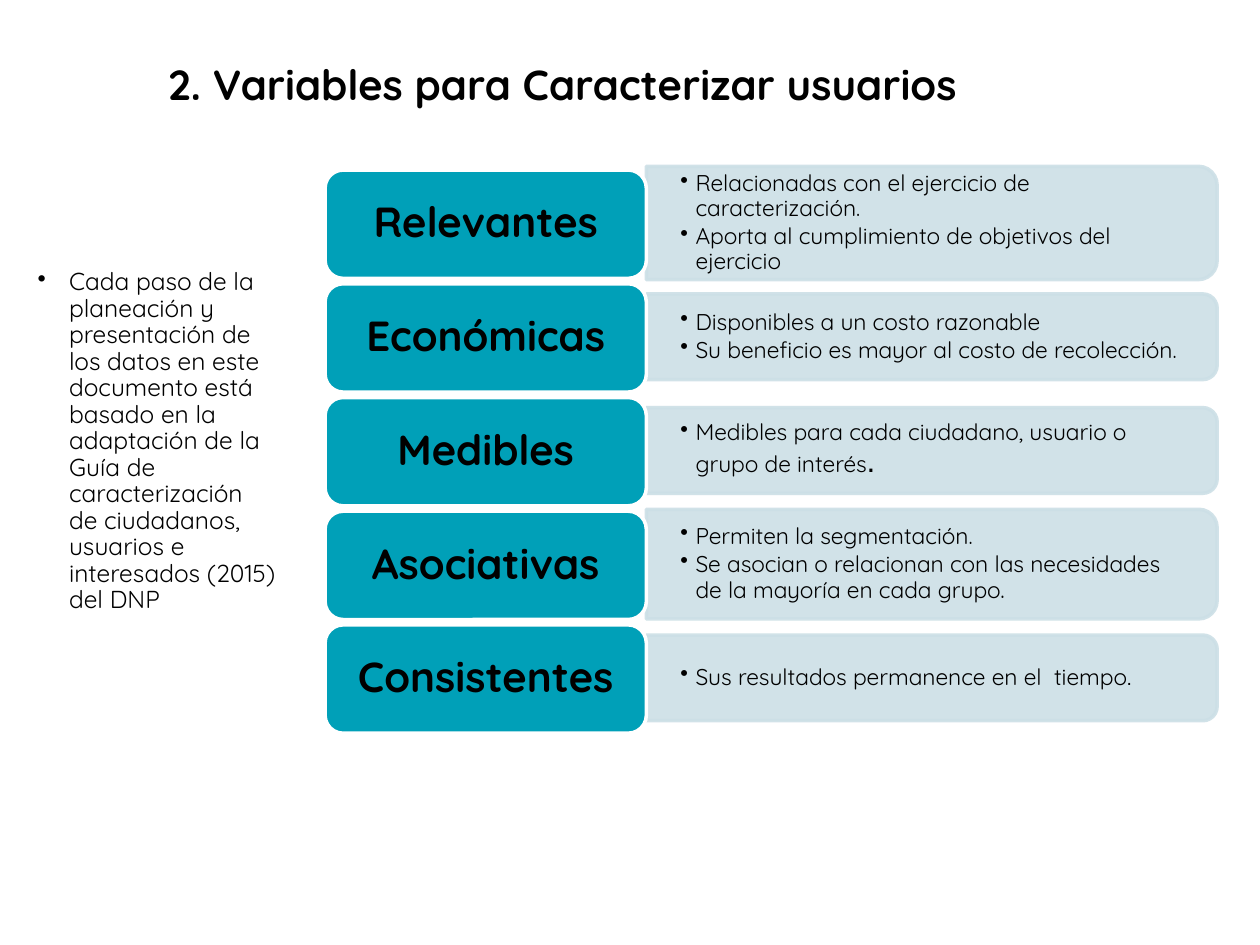
import pptx
import pptx.util
import pptx.dml.color
import pptx.enum.shapes
import pptx.enum.text
import pptx.oxml
import pptx.oxml.ns

Inches = pptx.util.Inches
Pt = pptx.util.Pt
RGBColor = pptx.dml.color.RGBColor
MSO_SHAPE = pptx.enum.shapes.MSO_SHAPE
MSO_ANCHOR = pptx.enum.text.MSO_ANCHOR
PP_ALIGN = pptx.enum.text.PP_ALIGN

TEAL = RGBColor(0x00, 0xA0, 0xB8)
PALE = RGBColor(0xCC, 0xDF, 0xE6)
WHITE = RGBColor(0xFF, 0xFF, 0xFF)
BLACK = RGBColor(0x00, 0x00, 0x00)
FONT = "Quicksand"

TITLE = "2. Variables para Caracterizar usuarios "
SOURCE_NOTE = (
    "Cada paso de la planeación y presentación de los datos en este documento "
    "está basado en la adaptación de la Guía de caracterización de ciudadanos, "
    "usuarios e interesados (2015) del DNP"
)
ROWS = [
    ("Relevantes", 0.9, [
        [("Relacionadas con el ejercicio de  caracterización.", 13, FONT)],
        [("Aporta al cumplimiento de objetivos del ejercicio", 13, FONT)],
    ]),
    ("Económicas", 0.68, [
        [("Disponibles a un costo razonable", 13, FONT)],
        [("Su beneficio es mayor al costo de recolección.", 13, FONT)],
    ]),
    ("Medibles", 0.68, [
        [("Medibles para cada ciudadano, usuario o grupo de interés", 13, FONT),
         (".", 18, "Arial")],
    ]),
    ("Asociativas", 0.87, [
        [("Permiten la segmentación.", 13, FONT)],
        [("Se asocian o relacionan con las necesidades de la mayoría en cada grupo", 13, FONT),
         (".", 14, FONT)],
    ]),
    ("Consistentes", 0.68, [
        [("Sus resultados permanence en el  tiempo", 13, FONT), (".", 11, "Arial")],
    ]),
]


def add_run(p, text, size, font=FONT, bold=False):
    """Add one black run to a paragraph."""
    r = p.add_run()
    r.text = text
    r.font.size = Pt(size)
    r.font.name = font
    r.font.bold = bold
    r.font.color.rgb = BLACK


def set_bullet(p, indent):
    """Give a paragraph a round bullet with a hanging indent."""
    pPr = p._p.get_or_add_pPr()
    pPr.set("marL", str(Inches(indent)))
    pPr.set("indent", str(-Inches(indent)))
    bu = pptx.oxml.parse_xml(f'<a:buChar {pptx.oxml.ns.nsdecls("a")} char="•"/>')
    pPr.append(bu)


def add_text_box(s, left, top, width, height):
    """Add a wrapping text box and return its text frame."""
    tf = s.shapes.add_textbox(
        Inches(left), Inches(top), Inches(width), Inches(height)).text_frame
    tf.word_wrap = True
    return tf


def add_block(s, shape, left, top, width, height, fill, line):
    """Add a filled, outlined shape without shadow."""
    sp = s.shapes.add_shape(
        shape, Inches(left), Inches(top), Inches(width), Inches(height))
    sp.shadow.inherit = False
    sp.fill.solid()
    sp.fill.fore_color.rgb = fill
    sp.line.color.rgb = line
    sp.line.width = Pt(2)
    return sp


def add_title(s, left, top, width, height):
    """Place the centred slide title."""
    p = add_text_box(s, left, top, width, height).paragraphs[0]
    p.alignment = PP_ALIGN.CENTER
    p.line_spacing = 0.9
    add_run(p, TITLE, 24, bold=True)


def add_source_note(s, left, top, width, height):
    """Place the bulleted note on the left."""
    p = add_text_box(s, left, top, width, height).paragraphs[0]
    p.line_spacing = 0.9
    set_bullet(p, 0.25)
    add_run(p, SOURCE_NOTE, 14)


def add_panel(s, left, middle, width, height, items):
    """Place a pale panel rounded on its right side, with its bullets."""
    sp = add_block(s, MSO_SHAPE.ROUND_2_SAME_RECTANGLE,
                   left + (width - height) / 2, middle - width / 2,
                   height, width, PALE, PALE)
    sp.rotation = 90
    for clr in sp._element.spPr.iter(pptx.oxml.ns.qn("a:srgbClr")):
        clr.append(pptx.oxml.parse_xml(
            f'<a:alpha {pptx.oxml.ns.nsdecls("a")} val="90000"/>'))

    tf = add_text_box(s, left, middle - height / 2 + 0.05, width - 0.04, height - 0.1)
    tf.vertical_anchor = MSO_ANCHOR.MIDDLE
    tf.margin_left = tf.margin_right = Inches(0.27)
    tf.margin_top = tf.margin_bottom = Inches(0.14)
    for i, runs in enumerate(items):
        p = tf.add_paragraph() if i else tf.paragraphs[0]
        p.line_spacing = 0.9
        p.space_after = Pt(2)
        set_bullet(p, 0.12)
        for text, size, font in runs:
            add_run(p, text, size, font)


def add_label(s, left, middle, width, height, text):
    """Place a teal rounded label centred on the given height."""
    sp = add_block(s, MSO_SHAPE.ROUNDED_RECTANGLE, left, middle - height / 2,
                   width, height, TEAL, WHITE)
    tf = sp.text_frame
    tf.word_wrap = True
    tf.vertical_anchor = MSO_ANCHOR.MIDDLE
    p = tf.paragraphs[0]
    p.alignment = PP_ALIGN.CENTER
    p.line_spacing = 0.9
    add_run(p, text, 24, bold=True)


def add_variables(s, left, top, width, height):
    """Place the rows of labels and panels in equal steps."""
    label_w, label_h = 2.55, 0.86
    step = (height - label_h) / (len(ROWS) - 1)
    for i, (label, panel_h, items) in enumerate(ROWS):
        middle = top + label_h / 2 + i * step
        add_panel(s, left + label_w, middle - 0.01, width - label_w, panel_h, items)
        add_label(s, left, middle, label_w, label_h, label)


def main():
    """Build and save the slide."""
    prs = pptx.Presentation()
    prs.slide_width = Inches(10)
    prs.slide_height = Inches(7.5)
    s = prs.slides.add_slide(prs.slide_layouts[6])
    add_title(s, 0.2, 0.46, 8.62, 0.84)
    add_source_note(s, 0.2, 2.09, 2.1, 3.24)
    add_variables(s, 2.58, 1.35, 7.08, 4.47)
    prs.save("out.pptx")


if __name__ == "__main__":
    main()
